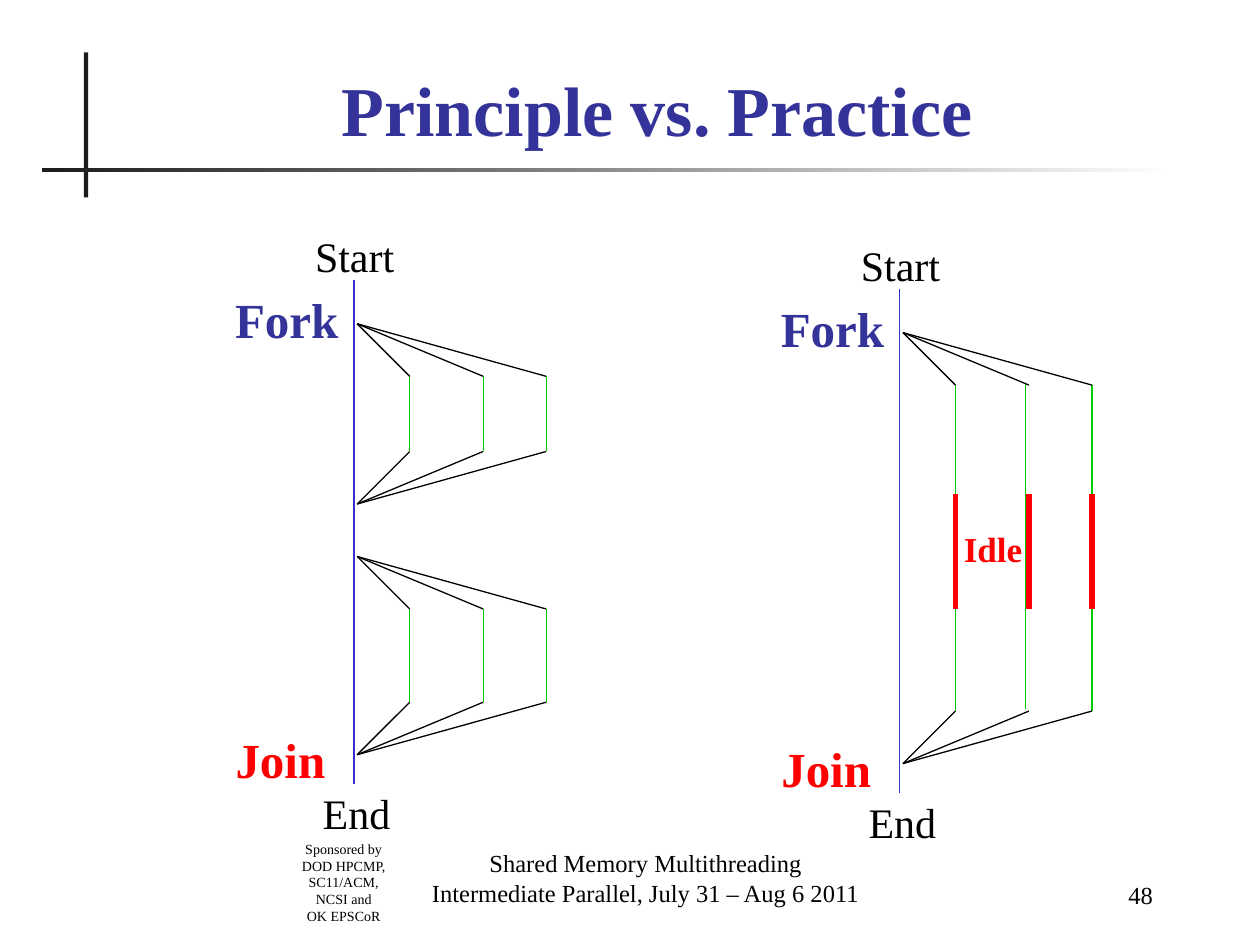
"""Build the slide that compares fork-join threading in principle and in practice."""
from dataclasses import dataclass

from lxml.etree import SubElement
from pptx import Presentation
from pptx.dml.color import RGBColor as RGB
from pptx.enum.shapes import MSO_CONNECTOR as Conn, MSO_SHAPE as Shape
from pptx.enum.text import MSO_ANCHOR as Anchor, MSO_AUTO_SIZE as Auto, PP_ALIGN as Align
from pptx.oxml.ns import qn
from pptx.util import Emu, Inches, Pt

COLS, ROWS = 120, 90
HUB = 0.3
THREADS = (5.3, 12.3, 18.3)
FAN = 5


@dataclass(frozen=True)
class Theme:
    font: str = "Times New Roman"
    ink: str = "000000"
    rule: str = "1C1C1C"
    paper: str = "FFFFFF"
    navy: str = "333399"
    spine: str = "3333CC"
    work: str = "00CC00"
    alert: str = "FF0000"
    title: int = 40
    mark: int = 28
    end: int = 24
    idle: int = 20
    footer: int = 14
    small: int = 8
    thin: float = 0.75
    thick: float = 3


@dataclass(frozen=True)
class Box:
    col: float
    row: float
    cols: float
    rows: float

    def shifted(self, col: float, row: float) -> "Box":
        return Box(self.col + col, self.row + row, self.cols, self.rows)


@dataclass(frozen=True)
class Label:
    text: str
    box: Box
    size: int
    color: str
    bold: bool
    align: Align


@dataclass(frozen=True)
class Block:
    fork: float
    join: float
    nudge: tuple = (0, 0)


@dataclass(frozen=True)
class Diagram:
    col: float
    row: float
    blocks: tuple
    idle: tuple = ()


T = Theme()
LABELS = (
    Label("Fork", Box(-12.55, 0.36, 12.24, 6.84), T.mark, T.navy, True, Align.RIGHT),
    Label("Join", Box(-12.48, 42.24, 10.92, 6.84), T.mark, T.alert, True, Align.RIGHT),
    Label("Start", Box(-4.92, -5.28, 9.96, 6), T.end, T.ink, False, Align.CENTER),
    Label("End", Box(-4.2, 47.8, 8.88, 6), T.end, T.ink, False, Align.CENTER),
)
IDLE = Label("Idle", Box(4.92, 22.2, 7.92, 5.16), T.idle, T.alert, True, Align.CENTER)
DIAGRAMS = (
    Diagram(33.72, 26.64, (Block(4.2, 21.36), Block(26.36, 45.24))),
    Diagram(85.7, 27.48, (Block(4.2, 45.24, (-0.3, -0.24)),), (19.56, 30.48)),
)

prs = Presentation()
prs.slide_width, prs.slide_height = Inches(10), Inches(7.5)


def x(col: float) -> Emu:
    return Emu(round(prs.slide_width * col / COLS))


def y(row: float) -> Emu:
    return Emu(round(prs.slide_height * row / ROWS))


def frame(box: Box) -> tuple:
    return x(box.col), y(box.row), x(box.cols), y(box.rows)


def write(sp, *lines: str, size: int, color: str = T.ink, bold: bool = False,
          align: Align = Align.CENTER, anchor: Anchor = Anchor.TOP, wrap: bool = True) -> None:
    tf = sp.text_frame
    tf.auto_size, tf.word_wrap, tf.vertical_anchor = Auto.NONE, wrap, anchor
    for i, line in enumerate(lines):
        p = tf.add_paragraph() if i else tf.paragraphs[0]
        p.alignment = align
        r = p.add_run()
        r.text = line
        r.font.name, r.font.size, r.font.bold = T.font, Pt(size), bold
        r.font.color.rgb = RGB.from_string(color)


def add_text(s, box: Box, *lines: str, **fmt) -> None:
    write(s.shapes.add_textbox(*frame(box)), *lines, **fmt)


def add_label(s, label: Label, d: Diagram) -> None:
    add_text(s, label.box.shifted(d.col, d.row), label.text, size=label.size,
             color=label.color, bold=label.bold, align=label.align, wrap=False)


def add_line(s, d: Diagram, start: tuple, end: tuple, color: str, width: float = T.thin) -> None:
    (c1, r1), (c2, r2) = start, end
    cn = s.shapes.add_connector(Conn.STRAIGHT, x(d.col + c1), y(d.row + r1),
                                x(d.col + c2), y(d.row + r2))
    cn.line.color.rgb, cn.line.width = RGB.from_string(color), Pt(width)
    SubElement(cn._element.spPr, qn("a:effectLst"))


def add_rule(s, box: Box, fade: bool = False) -> None:
    sp = s.shapes.add_shape(Shape.RECTANGLE, *frame(box))
    sp.shadow.inherit = False
    sp.line.fill.background()
    if fade:
        sp.fill.gradient()
        sp.fill.gradient_angle = 0
        for stop, color in zip(sp.fill.gradient_stops, (T.rule, T.paper)):
            stop.color.rgb = RGB.from_string(color)
    else:
        sp.fill.solid()
        sp.fill.fore_color.rgb = RGB.from_string(T.rule)


def add_block(s, d: Diagram, b: Block) -> None:
    top, bottom = b.fork + FAN, b.join - FAN
    for i, col in enumerate(THREADS):
        dc, dr = b.nudge if i == 1 else (0, 0)
        add_line(s, d, (col + dc, top + dr), (col + dc, bottom + dr), T.work)
        add_line(s, d, (HUB, b.fork), (col, top), T.ink)
        add_line(s, d, (HUB, b.join), (col, bottom), T.ink)


def add_diagram(s, d: Diagram) -> None:
    add_line(s, d, (0, 0), (0, 48), T.spine)
    for block in d.blocks:
        add_block(s, d, block)
    for label in LABELS:
        add_label(s, label, d)
    if d.idle:
        first, last = d.idle
        for col in THREADS:
            add_line(s, d, (col, first), (col, last), T.alert, T.thick)
        add_label(s, IDLE, d)


def main() -> None:
    s = prs.slides.add_slide(prs.slide_layouts[5])
    add_rule(s, Box(8, 5, 0.4, 13.8))
    add_rule(s, Box(4, 16, 108, 0.4), fade=True)
    title = s.shapes.title
    title.left, title.top, title.width, title.height = frame(Box(10, 6, 105.2, 8.9))
    write(title, "Principle vs. Practice", size=T.title, color=T.navy, bold=True,
          anchor=Anchor.BOTTOM)
    for diagram in DIAGRAMS:
        add_diagram(s, diagram)
    add_text(s, Box(27.24, 79.44, 11, 9.24), "Sponsored by DOD HPCMP, SC11/ACM, NCSI and",
             "OK EPSCoR", size=T.small)
    add_text(s, Box(37, 81, 49, 6), "Shared Memory Multithreading",
             "Intermediate Parallel, July 31 – Aug 6 2011", size=T.footer, anchor=Anchor.BOTTOM)
    add_text(s, Box(94, 81.24, 17, 6), "48", size=T.footer, align=Align.RIGHT,
             anchor=Anchor.BOTTOM)
    prs.save("out.pptx")


if __name__ == "__main__":
    main()
